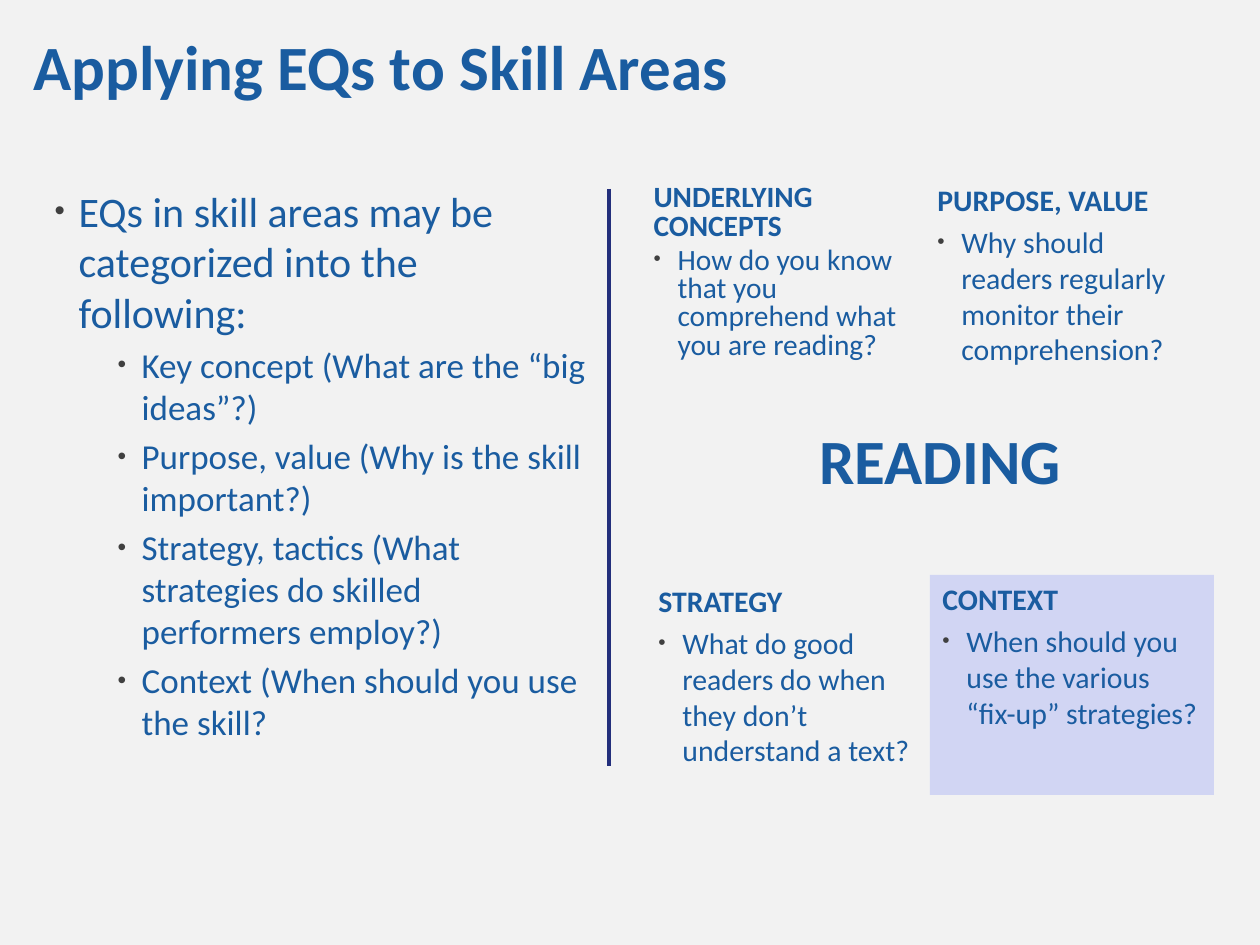
from lxml.etree import SubElement
from pptx import Presentation
from pptx.dml.color import RGBColor
from pptx.enum.shapes import MSO_CONNECTOR, MSO_SHAPE
from pptx.enum.text import MSO_ANCHOR, MSO_AUTO_SIZE, PP_ALIGN
from pptx.oxml.ns import qn
from pptx.util import Pt

PX = 914400 // 126
FONT = "Calibri"
BLUE = RGBColor(0x1A, 0x5C, 0xA0)
NAVY = RGBColor(0x23, 0x2F, 0x7C)
LAVENDER = RGBColor(0xD1, 0xD5, 0xF3)
BACKGROUND = RGBColor(0xF2, 0xF2, 0xF2)
BULLET_GRAY = RGBColor(0x40, 0x40, 0x40)
HANGING = 24
SUB_INDENT = 87

INTRO = "EQs in skill areas may be categorized into the following:"
CATEGORIES = [
    "Key concept (What are the “big ideas”?)",
    "Purpose, value (Why is the skill important?)",
    "Strategy, tactics (What strategies do skilled performers employ?)",
    "Context (When should you use the skill?",
]


def place(shape, left, top, width, height):
    shape.left, shape.top = left * PX, top * PX
    shape.width, shape.height = width * PX, height * PX


def prepare_frame(shape, anchor=MSO_ANCHOR.TOP):
    frame = shape.text_frame
    frame.word_wrap = True
    frame.auto_size = MSO_AUTO_SIZE.NONE
    frame.vertical_anchor = anchor
    return frame


def set_bullet(para, indent):
    """Give the paragraph a hanging bullet, or none when indent is 0."""
    properties = para._p.get_or_add_pPr()
    properties.set("marL", str(indent * PX))
    properties.set("indent", str(-HANGING * PX if indent else 0))
    if not indent:
        SubElement(properties, qn("a:buNone"))
        return
    color = SubElement(properties, qn("a:buClr"))
    SubElement(color, qn("a:srgbClr"), val=str(BULLET_GRAY))
    SubElement(properties, qn("a:buSzPct"), val="70000")
    SubElement(properties, qn("a:buFont"), typeface="Arial")
    SubElement(properties, qn("a:buChar"), char="•")


def write_paragraph(frame, text, size, bold=False, indent=0,
                    align=PP_ALIGN.LEFT, line_spacing=1.0):
    """Fill the empty first paragraph of the frame, or add one after it."""
    is_first = not frame.text
    para = frame.paragraphs[0] if is_first else frame.add_paragraph()
    para.text = text
    para.level = 1 if indent > HANGING else 0
    set_bullet(para, indent)
    para.alignment = align
    para.line_spacing = line_spacing
    para.space_before = Pt(0 if is_first else round(size * 0.2, 1))
    for span in para.runs:
        span.font.name = FONT
        span.font.size = Pt(size)
        span.font.bold = bold
        span.font.color.rgb = BLUE


def write_question(shape, heading, question, size=17, line_spacing=1.0):
    frame = prepare_frame(shape)
    write_paragraph(frame, heading, size, bold=True, line_spacing=line_spacing)
    write_paragraph(frame, question, size, indent=HANGING, line_spacing=line_spacing)


def add_box(page, left, top, width, height):
    return page.shapes.add_textbox(left * PX, top * PX, width * PX, height * PX)


def add_panel(page, left, top, width, height):
    panel = page.shapes.add_shape(MSO_SHAPE.RECTANGLE, left * PX, top * PX,
                                  width * PX, height * PX)
    panel.shadow.inherit = False
    panel.fill.solid()
    panel.fill.fore_color.rgb = LAVENDER
    panel.line.fill.background()
    return panel


def add_divider(page, x, top, bottom):
    divider = page.shapes.add_connector(MSO_CONNECTOR.STRAIGHT, x * PX, top * PX,
                                        x * PX, bottom * PX)
    divider.line.color.rgb = NAVY
    divider.line.width = Pt(2)
    SubElement(divider._element.spPr, qn("a:effectLst"))


def main():
    deck = Presentation()
    deck.slide_width, deck.slide_height = 1260 * PX, 945 * PX
    page = deck.slides.add_slide(deck.slide_layouts[3])
    page.background.fill.solid()
    page.background.fill.fore_color.rgb = BACKGROUND
    title, categories, concepts = page.placeholders

    place(title, 21, 21, 1134, 88)
    write_paragraph(prepare_frame(title, MSO_ANCHOR.MIDDLE),
                    "Applying EQs to Skill Areas", 36, bold=True)

    place(categories, 42, 179, 557, 624)
    frame = prepare_frame(categories)
    write_paragraph(frame, INTRO, 24, indent=HANGING)
    for category in CATEGORIES:
        write_paragraph(frame, category, 20, indent=SUB_INDENT)

    add_divider(page, 609, 189, 766)

    place(concepts, 641, 179, 284, 220)
    write_question(concepts, "UNDERLYING CONCEPTS",
                   "How do you know that you comprehend what you are reading?",
                   size=16.8, line_spacing=0.8)
    write_question(add_box(page, 925, 176, 284, 220), "PURPOSE, VALUE",
                   "Why should readers regularly monitor their comprehension?")
    write_question(add_box(page, 646, 577, 284, 220), "STRATEGY",
                   "What do good readers do when they don’t understand a text?")
    write_question(add_panel(page, 930, 575, 284, 220), "CONTEXT",
                   "When should you use the various “fix-up” strategies?")

    subject = prepare_frame(add_box(page, 798, 415, 284, 136))
    write_paragraph(subject, "READING", 36, bold=True, align=PP_ALIGN.CENTER)

    deck.save("out.pptx")


if __name__ == "__main__":
    main()
